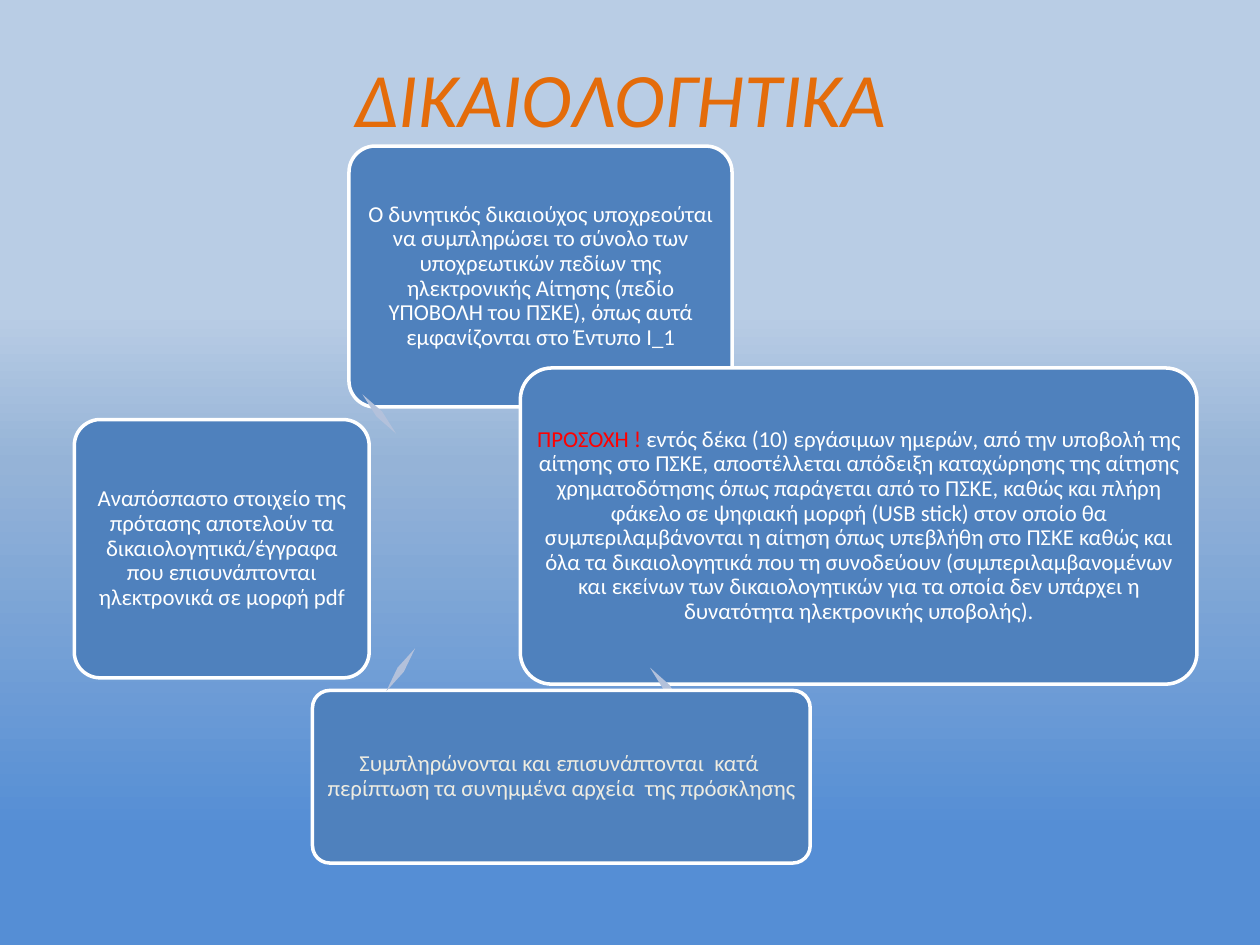
from lxml import etree
from pptx import Presentation
from pptx import util as u
from pptx.dml.color import RGBColor
from pptx.enum import shapes, text
from pptx.oxml.ns import qn

FONT = "Calibri"
BLUE, ARROW, WHITE, CREAM, RED, ORANGE = (
    "4F81BD", "B3C1DB", "FFFFFF", "EEECE1", "FF0000", "E46C0A")
BACKGROUND = [(33, "B9CDE5"), (49, "95B3D7"), (88, "558ED5")]

# Position (left, top, width, height) and coloured runs of each step
TOP_BOX = (2.77, 1.16, 3.04, 2.07), [
    ("Ο δυνητικός δικαιούχος υποχρεούται να συμπληρώσει το σύνολο των "
     "υποχρεωτικών πεδίων της ηλεκτρονικής Αίτησης (πεδίο ΥΠΟΒΟΛΗ του ΠΣΚΕ), "
     "όπως αυτά εμφανίζονται στο Έντυπο Ι_1", WHITE)]
RIGHT_BOX = (4.13, 2.92, 5.37, 2.51), [
    ("ΠΡΟΣΟΧΉ ! ", RED),
    ("εντός δέκα (10) εργάσιμων ημερών, από την υποβολή της αίτησης στο ΠΣΚΕ, "
     "αποστέλλεται απόδειξη καταχώρησης της αίτησης χρηματοδότησης όπως "
     "παράγεται από το ΠΣΚΕ, καθώς και πλήρη φάκελο σε ψηφιακή μορφή (USB "
     "stick) στον οποίο θα συμπεριλαμβάνονται η αίτηση όπως υπεβλήθη στο ΠΣΚΕ "
     "καθώς και όλα τα δικαιολογητικά που τη συνοδεύουν (συμπεριλαμβανομένων "
     "και εκείνων των δικαιολογητικών για τα οποία δεν υπάρχει η δυνατότητα "
     "ηλεκτρονικής υποβολής).", WHITE)]
BOTTOM_BOX = (2.48, 5.48, 3.95, 1.37), [
    ("Συμπληρώνονται και επισυνάπτονται  κατά  περίπτωση τα συνημμένα αρχεία  "
     "της πρόσκλησης", CREAM)]
LEFT_BOX = (0.59, 3.33, 2.34, 2.05), [
    ("Αναπόσπαστο στοιχείο της πρότασης αποτελούν τα δικαιολογητικά/έγγραφα "
     "που επισυνάπτονται ηλεκτρονικά σε μορφή pdf", WHITE)]

# Each arrow (left, top, rotation) lies above the box before it
STEPS = [
    (TOP_BOX, (5.38, 2.86, 218.1)),
    (RIGHT_BOX, (5.26, 5.25, 139.9)),
    (BOTTOM_BOX, (3.15, 5.11, 213.9)),
    (LEFT_BOX, (2.98, 3.08, 319.4)),
]


def rgb(color):
    return RGBColor.from_string(color)


def set_attrs(obj, **values):
    for name, value in values.items():
        setattr(obj, name, value)


def set_background(s, stops):
    fill = s.background.fill
    fill.gradient()
    fill.gradient_angle = 270  # counter-clockwise, so top to bottom
    gs_list = s.background._cSld.find(".//" + qn("a:gsLst"))
    for gs in list(gs_list):
        gs_list.remove(gs)
    for percent, color in stops:
        gs = etree.SubElement(gs_list, qn("a:gs"), pos=str(percent * 1000))
        etree.SubElement(gs, qn("a:srgbClr"), val=color)


def add_run(p, content, color, size, italic=False):
    r = p.add_run()
    r.text = content
    set_attrs(r.font, name=FONT, size=u.Pt(size), italic=italic)
    r.font.color.rgb = rgb(color)


def add_title(s, content):
    sp = s.shapes.title
    set_attrs(sp, left=u.Inches(0.5), top=u.Inches(0.3),
              width=u.Inches(9), height=u.Inches(0.93))
    set_attrs(sp.text_frame, vertical_anchor=text.MSO_ANCHOR.MIDDLE,
              auto_size=text.MSO_AUTO_SIZE.NONE)
    p = sp.text_frame.paragraphs[0]
    p.alignment = text.PP_ALIGN.CENTER
    add_run(p, content, ORANGE, 44, italic=True)


def add_filled(s, kind, box, fill, adjustments):
    sp = s.shapes.add_shape(kind, *(u.Inches(v) for v in box))
    sp.shadow.inherit = False
    sp.fill.solid()
    sp.fill.fore_color.rgb = rgb(fill)
    for i, value in enumerate(adjustments):
        sp.adjustments[i] = value
    return sp


def add_box(s, box, runs):
    sp = add_filled(s, shapes.MSO_SHAPE.ROUNDED_RECTANGLE, box, BLUE, [0.1])
    sp.line.color.rgb = rgb(WHITE)
    sp.line.width = u.Pt(2)
    tf = sp.text_frame
    inset = u.Inches(0.05)
    set_attrs(tf, word_wrap=True, vertical_anchor=text.MSO_ANCHOR.MIDDLE,
              margin_left=inset, margin_right=inset,
              margin_top=inset, margin_bottom=inset)
    p = tf.paragraphs[0]
    set_attrs(p, alignment=text.PP_ALIGN.CENTER, line_spacing=0.9,
              space_after=u.Pt(4.55))
    for content, color in runs:
        add_run(p, content, color, 13)


def add_arrow(s, left, top, rotation):
    sp = add_filled(s, shapes.MSO_SHAPE.LEFT_RIGHT_ARROW,
                    (left, top, 0.06, 0.41), ARROW, [0.6, 0.5])
    sp.line.fill.background()
    sp.rotation = rotation


def main():
    prs = Presentation()
    set_attrs(prs, slide_width=u.Inches(10), slide_height=u.Inches(7.5))
    s = prs.slides.add_slide(prs.slide_layouts[5])
    set_background(s, BACKGROUND)
    add_title(s, "ΔΙΚΑΙΟΛΟΓΗΤΙΚΑ ")
    # Cycle of steps joined by arrows
    for (box, runs), arrow in STEPS:
        add_box(s, box, runs)
        add_arrow(s, *arrow)
    prs.save("out.pptx")


if __name__ == "__main__":
    main()
